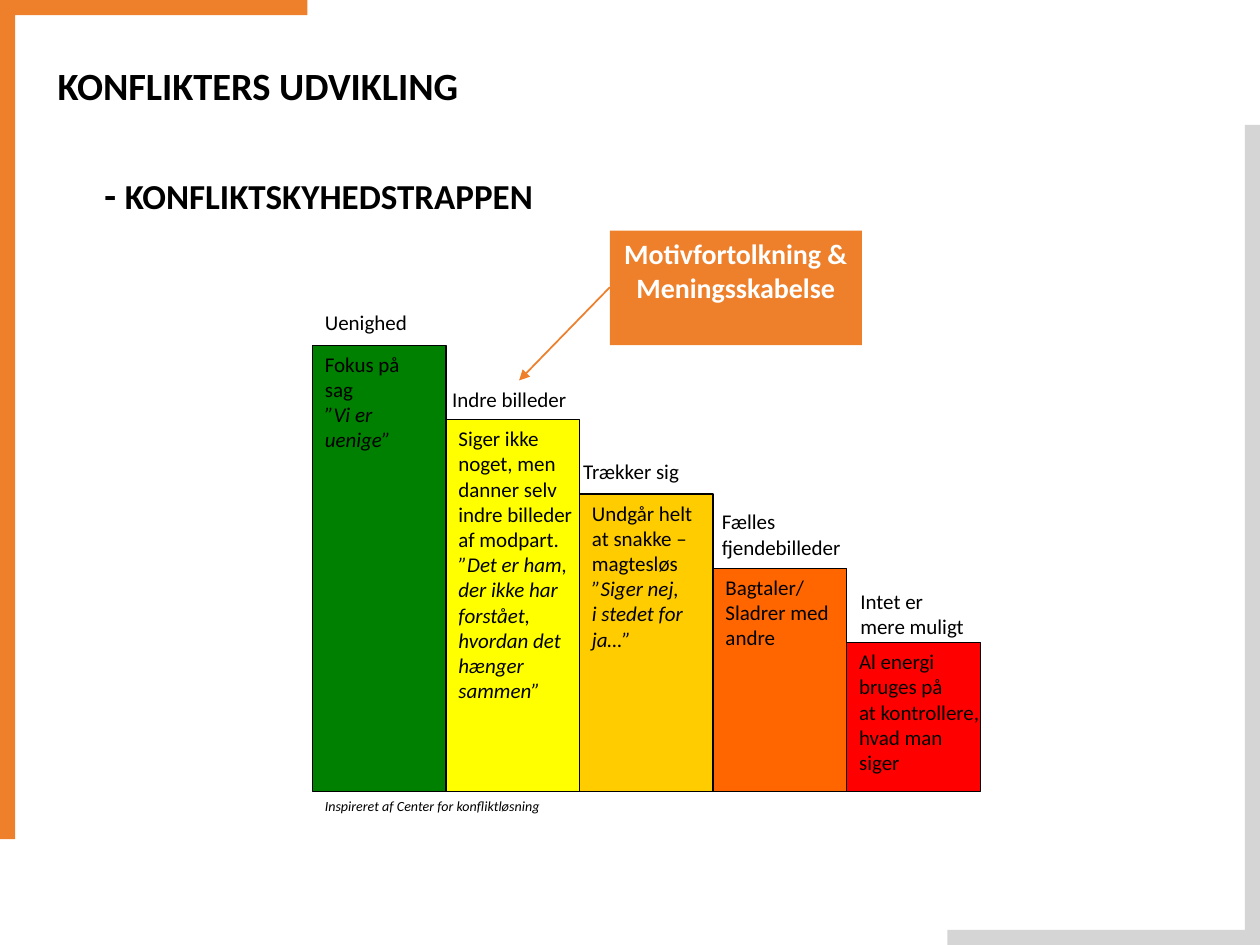
from dataclasses import dataclass

from lxml import etree
from pptx import Presentation
from pptx.dml.color import RGBColor as RGB
from pptx.enum.shapes import MSO_CONNECTOR as LINK, MSO_SHAPE as SHAPE
from pptx.enum.text import MSO_ANCHOR as ANCHOR, PP_ALIGN as ALIGN
from pptx.oxml.ns import qn
from pptx.util import Inches, Pt


@dataclass(frozen=True)
class Theme:
    font: str = "Calibri"
    ink: str = "000000"
    paper: str = "FFFFFF"
    accent: str = "EE802C"
    grey: str = "D5D5D5"
    title: int = 22
    sub: int = 20
    call: int = 16
    body: int = 12
    note: int = 8


class Deck:
    def __init__(self, theme):
        self.theme = theme
        self.prs = Presentation()
        self.prs.slide_width, self.prs.slide_height = Inches(10), Inches(7.5)
        self.slide = self.prs.slides.add_slide(self.prs.slide_layouts[6])

    def label(self, shape, paras, size, color=None, bold=False, italic=(),
              align=ALIGN.LEFT, wrap=True):
        """Fill a shape with paragraphs; italic lists the slanted ones by index."""
        frame = shape.text_frame
        frame.word_wrap = wrap
        frame.vertical_anchor = ANCHOR.TOP
        for i, text in enumerate(paras):
            para = frame.paragraphs[0] if i == 0 else frame.add_paragraph()
            para.text = text
            para.alignment = align
            font = para.font
            font.name, font.size = self.theme.font, Pt(size)
            font.bold, font.italic = bold, i in italic
            font.color.rgb = RGB.from_string(color or self.theme.ink)

    def rect(self, box, fill, line=None):
        shape = self.slide.shapes.add_shape(SHAPE.RECTANGLE, *map(Inches, box))
        shape.shadow.inherit = False
        shape.fill.solid()
        shape.fill.fore_color.rgb = RGB.from_string(fill)
        if line:
            shape.line.color.rgb = RGB.from_string(line)
            shape.line.width = Pt(0.75)
        else:
            shape.line.fill.background()
        return shape

    def text(self, box, paras, size, **style):
        shape = self.slide.shapes.add_textbox(*map(Inches, box))
        self.label(shape, paras, size, **style)
        return shape

    def arrow(self, start, end, color):
        link = self.slide.shapes.add_connector(
            LINK.STRAIGHT, *map(Inches, start + end))
        link.line.color.rgb = RGB.from_string(color)
        link.line.width = Pt(1)
        props = link._element.spPr
        etree.SubElement(props.find(qn("a:ln")), qn("a:tailEnd"),
                         type="triangle")
        etree.SubElement(props, qn("a:effectLst"))


# Fill, text, italic paragraphs, wrap
STEPS = [
    ("008000", ["Fokus på", "sag", "”Vi er uenige”"], {2}, True),
    ("FFFF00", ["Siger ikke", "noget, men", "danner selv", "indre billeder",
                "af modpart.", "”Det er ham,",
                "der ikke har\vforstået,\vhvordan det\vhænger\vsammen”"],
     {5, 6}, False),
    ("FFCC00", ["Undgår helt", "at snakke –", "magtesløs", "”Siger nej,",
                "i stedet for", "ja…”"], {3, 4, 5}, False),
    ("FF6600", ["Bagtaler/", "Sladrer med", "andre"], (), False),
    ("FF0000", ["Al energi", "bruges på", "at kontrollere,", "hvad man",
                "siger"], (), False),
]
LABELS = [
    ((2.48, 2.41, 0.91, 0.3), ["Uenighed"]),
    ((3.49, 3.02, 1.26, 0.3), ["Indre billeder"]),
    ((4.53, 3.59, 1.08, 0.3), ["Trækker sig"]),
    ((5.63, 3.99, 1.19, 0.5), ["Fælles", "fjendebilleder"]),
    ((6.73, 4.62, 1.07, 0.5), ["Intet er", "mere muligt"]),
]
LEFT, TOP, BASE = 2.48, 2.74, 6.28
WIDTH, DROP = 1.06, 0.59


def main():
    theme = Theme()
    deck = Deck(theme)

    for box, fill in [((9.88, 0.99, 0.12, 6.51), theme.grey),
                      ((0, 0, 0.12, 6.66), theme.accent),
                      ((0.08, 0, 2.36, 0.12), theme.accent),
                      ((7.52, 7.38, 2.36, 0.12), theme.grey)]:
        deck.rect(box, fill)

    deck.text((0.36, 0.44, 8.81, 0.47), ["KONFLIKTERS UDVIKLING"],
              theme.title, bold=True)
    sub = deck.text((0.73, 1.31, 4.56, 0.47), ["- "], theme.title, bold=True)
    run = sub.text_frame.paragraphs[0].add_run()
    run.text = "KONFLIKTSKYHEDSTRAPPEN"
    run.font.size = Pt(theme.sub)

    for i, (fill, paras, italic, wrap) in enumerate(STEPS):
        top = TOP + i * DROP
        step = deck.rect((LEFT + i * WIDTH, top, WIDTH, BASE - top), fill,
                         theme.ink)
        deck.label(step, paras, theme.body, italic=italic, wrap=wrap)
    for box, paras in LABELS:
        deck.text(box, paras, theme.body, wrap=False)
    deck.text((LEFT, BASE, 5, 0.23),
              ["Inspireret af Center for konfliktløsning"], theme.note,
              italic={0})

    call = deck.rect((4.84, 1.83, 2, 0.91), theme.accent)
    deck.label(call, ["Motivfortolkning &", "Meningsskabelse"], theme.call,
               color=theme.paper, bold=True, align=ALIGN.CENTER)
    deck.arrow((4.84, 2.28), (4.12, 3.02), theme.accent)

    deck.prs.save("out.pptx")


if __name__ == "__main__":
    main()
